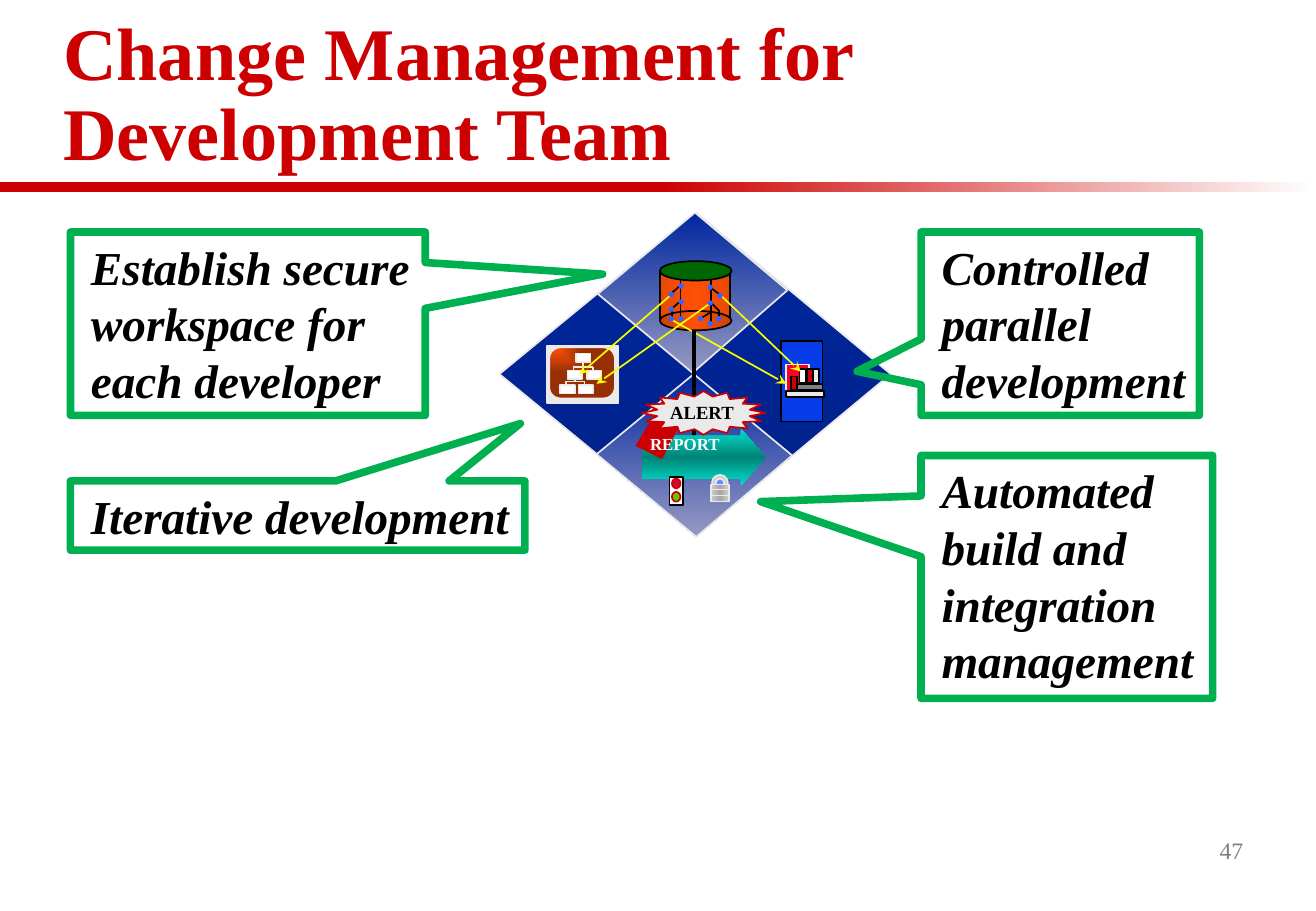
"""Build the slide on change management for a development team."""
from dataclasses import dataclass
from typing import Optional, Union

from lxml import etree
from pptx import Presentation
from pptx.dml.color import RGBColor
from pptx.enum.shapes import MSO_CONNECTOR, MSO_SHAPE
from pptx.enum.text import MSO_ANCHOR, PP_ALIGN
from pptx.oxml.ns import qn
from pptx.shapes.autoshape import Shape
from pptx.slide import Slide
from pptx.util import Cm, Length, Pt

RECT, OVAL, ROUNDED = MSO_SHAPE.RECTANGLE, MSO_SHAPE.OVAL, MSO_SHAPE.ROUNDED_RECTANGLE
ARROW, STAR = MSO_SHAPE.RIGHT_ARROW, MSO_SHAPE.STAR_16_POINT
CALLOUT = MSO_SHAPE.RECTANGULAR_CALLOUT
STRAIGHT = MSO_CONNECTOR.STRAIGHT
TOP, MIDDLE, BOTTOM = MSO_ANCHOR.TOP, MSO_ANCHOR.MIDDLE, MSO_ANCHOR.BOTTOM
LEFT, RIGHT = PP_ALIGN.LEFT, PP_ALIGN.RIGHT
FONT = "Times New Roman"
RED, BLACK, WHITE, PALE = "CC0000", "000000", "FFFFFF", "EAEAEA"
YELLOW, BLUE, GREEN, GREY = "FAFD00", "3365FB", "00B050", "808080"


@dataclass(frozen=True)
class Gradient:
    """Evenly spaced colours; no angle means outwards from the top left corner."""
    colors: tuple[str, ...]
    angle: Optional[int] = 0


Fill = Union[str, Gradient, None]


@dataclass(frozen=True)
class Box:
    """A preset shape, placed in inches."""
    kind: MSO_SHAPE
    at: tuple[float, float, float, float]
    fill: Fill = None
    line: Optional[str] = None
    width: float = 1
    adjust: tuple[float, ...] = ()


@dataclass(frozen=True)
class Polygon:
    """A closed outline through points in inches."""
    points: tuple[tuple[float, float], ...]
    fill: Fill
    line: Optional[str] = None
    width: float = 1


@dataclass(frozen=True)
class Stroke:
    """A straight line between two points in inches."""
    ends: tuple[float, float, float, float]
    color: str
    width: float = 1
    arrow: bool = False


@dataclass(frozen=True)
class Words:
    """Paragraphs with their type style and frame settings."""
    lines: tuple[str, ...]
    size: float
    color: str = BLACK
    bold: bool = True
    italic: bool = False
    align: PP_ALIGN = LEFT
    anchor: MSO_ANCHOR = TOP
    wrap: bool = False
    margins: tuple[float, float] = (0.1, 0.05)
    indent: float = 0
    spacing: Optional[float] = None


def inches(value: float) -> Length:
    """Convert inches to a length."""
    return Cm(value * 2.54)


def rgb(color: str) -> RGBColor:
    """Turn a hex string into a colour."""
    return RGBColor.from_string(color)


def paint(shape: Shape, fill: Fill, line: Optional[str], width: float) -> None:
    """Set fill, outline and absence of shadow."""
    shape.shadow.inherit = False
    if isinstance(fill, Gradient):
        shape.fill.gradient()
        if fill.angle is not None:
            shape.fill.gradient_angle = (360 - fill.angle) % 360
        gradient = shape.element.spPr.find(qn("a:gradFill"))
        stops = gradient.find(qn("a:gsLst"))
        for stop in list(stops):
            stops.remove(stop)
        for index, color in enumerate(fill.colors):
            position = 100000 * index // (len(fill.colors) - 1)
            stop = etree.SubElement(stops, qn("a:gs"), {"pos": str(position)})
            etree.SubElement(stop, qn("a:srgbClr"), {"val": color})
        if fill.angle is None:
            gradient.remove(gradient.find(qn("a:lin")))
            corner = etree.SubElement(gradient, qn("a:path"), {"path": "rect"})
            etree.SubElement(corner, qn("a:fillToRect"), {"r": "100000", "b": "100000"})
    elif fill:
        shape.fill.solid()
        shape.fill.fore_color.rgb = rgb(fill)
    else:
        shape.fill.background()
    if line:
        shape.line.color.rgb = rgb(line)
        shape.line.width = Pt(width)
    else:
        shape.line.fill.background()


def draw(slide: Slide, item: Union[Box, Polygon, Stroke]) -> Shape:
    """Draw one item on the slide."""
    if isinstance(item, Stroke):
        connector = slide.shapes.add_connector(STRAIGHT, *map(inches, item.ends))
        connector.line.color.rgb = rgb(item.color)
        connector.line.width = Pt(item.width)
        if item.arrow:
            outline = connector.element.spPr.find(qn("a:ln"))
            etree.SubElement(outline, qn("a:tailEnd"), {"type": "stealth"})
        etree.SubElement(connector.element.spPr, qn("a:effectLst"))
        return connector
    if isinstance(item, Polygon):
        start, *others = [(inches(x), inches(y)) for x, y in item.points]
        builder = slide.shapes.build_freeform(*start)
        builder.add_line_segments(others, close=True)
        shape = builder.convert_to_shape()
    else:
        shape = slide.shapes.add_shape(item.kind, *map(inches, item.at))
        for index, value in enumerate(item.adjust):
            shape.adjustments[index] = value
    paint(shape, item.fill, item.line, item.width)
    return shape


def write(shape: Shape, words: Words) -> None:
    """Fill the text frame of a shape."""
    frame = shape.text_frame
    frame.word_wrap = words.wrap
    frame.vertical_anchor = words.anchor
    frame.margin_left = frame.margin_right = inches(words.margins[0])
    frame.margin_top = frame.margin_bottom = inches(words.margins[1])
    for index, line in enumerate(words.lines):
        paragraph = frame.add_paragraph() if index else frame.paragraphs[0]
        paragraph.alignment = words.align
        paragraph.line_spacing = words.spacing
        if words.indent:
            paragraph._p.get_or_add_pPr().set("marL", str(inches(words.indent)))
        run = paragraph.add_run()
        run.text = line
        run.font.name, run.font.size = FONT, Pt(words.size)
        run.font.bold, run.font.italic = words.bold, words.italic
        run.font.color.rgb = rgb(words.color)


def label(slide: Slide, at: tuple[float, float, float, float], words: Words) -> None:
    """Add a text box."""
    write(slide.shapes.add_textbox(*map(inches, at)), words)


def strokes(color: str, ends: list[tuple[float, float, float, float]], arrow: bool = False) -> list[Stroke]:
    """Make thin lines of one colour."""
    return [Stroke(end, color, arrow=arrow) for end in ends]


def boxes(kind: MSO_SHAPE, size: tuple[float, float], fill: str, line: str,
          corners: list[tuple[float, float]]) -> list[Box]:
    """Make equal shapes at several corners."""
    return [Box(kind, (*corner, *size), fill, line) for corner in corners]


QUARTER = Gradient(("00279F", "9799C2"), 90)
DRUM = Gradient(("CC4006", "FF5008", "CC4006"))
RULE = [Box(RECT, (0, 1.5, 5.42, 0.08), RED),
        Box(RECT, (5.41, 1.5, 5.42, 0.08), Gradient((RED, WHITE)))]
DIAMOND = [
    Polygon(((4.11, 3.08), (5.73, 1.75), (7.33, 3.08), (5.73, 4.41)), Gradient(("00279F", "002188"), 90), PALE),
    Box(RECT, (6.43, 2.81, 0.34, 0.66), "063DE8", BLACK),
    Polygon(((4.92, 2.42), (5.72, 1.75), (6.48, 2.39), (5.7, 3.07)), QUARTER, PALE),
    Box(RECT, (5.43, 2.24, 0.58, 0.4), Gradient(("E74907", "FF5008", "E74907")), BLACK),
    Box(OVAL, (5.43, 2.56, 0.59, 0.16), DRUM, BLACK),
    Polygon(((4.91, 3.74), (5.71, 3.08), (6.52, 3.75), (5.73, 4.42)), QUARTER, PALE)]
HIERARCHY = [
    Box(RECT, (4.5, 2.85, 0.59, 0.47), PALE, PALE),
    Box(ROUNDED, (4.52, 2.86, 0.54, 0.42), Gradient(("FF5008", "972F05"), None), PALE, adjust=(0.22,)),
    *strokes(PALE, [(4.67, 3.14, 4.81, 3.14), (4.81, 3.14, 4.81, 3.17), (4.66, 3.14, 4.66, 3.17),
                    (4.73, 3.14, 4.73, 3.11), (4.72, 3.02, 4.88, 3.02), (4.88, 3.02, 4.88, 3.05),
                    (4.72, 3.01, 4.72, 3.05), (4.8, 2.98, 4.8, 3.02)]),
    *boxes(RECT, (0.12, 0.07), WHITE, PALE,
           [(4.67, 3.05), (4.83, 3.05), (4.61, 3.17), (4.76, 3.17), (4.74, 2.91)])]
SHELF = [Box(RECT, (6.47, 3, 0.19, 0.27), "FC0128", PALE), Box(RECT, (6.47, 3.22, 0.31, 0.05), PALE, BLACK),
         *[Box(RECT, (x, y, 0.05, 0.11), fill, BLACK) for x, y, fill in
           [(6.51, 3.1, RED), (6.58, 3.04, WHITE), (6.64, 3.04, RED), (6.69, 3.04, PALE)]]]
FLOWS = strokes(YELLOW, [(5.52, 2.43, 4.77, 3.08), (5.84, 2.5, 4.91, 3.16),
                         (5.94, 2.44, 6.59, 3.06), (5.54, 2.64, 6.47, 3.16)], arrow=True)
BRANCHES = [
    *strokes(BLACK, [(5.6, 2.28, 5.6, 2.64), (5.6, 2.35, 5.53, 2.41), (5.6, 2.48, 5.53, 2.54),
                     (5.53, 2.54, 5.53, 2.61), (5.85, 2.29, 5.85, 2.65), (5.85, 2.37, 5.93, 2.43),
                     (5.85, 2.49, 5.92, 2.56), (5.92, 2.56, 5.92, 2.62), (5.85, 2.57, 5.77, 2.62)]),
    *boxes(OVAL, (0.03, 0.03), BLUE, BLUE,
           [(5.59, 2.34), (5.59, 2.47), (5.59, 2.61), (5.51, 2.53), (5.51, 2.61), (5.51, 2.41),
            (5.91, 2.42), (5.75, 2.61), (5.83, 2.65), (5.83, 2.48), (5.83, 2.35), (5.9, 2.61)])]
PIPELINE = [
    Stroke((5.71, 2.72, 5.71, 3.69), BLACK, 2), Box(RECT, (6.56, 3.16, 0.21, 0.05), GREY, BLACK),
    Box(OVAL, (5.43, 2.15, 0.59, 0.16), "006600", BLACK),
    Box(ARROW, (5.28, 3.53, 1.02, 0.47), Gradient(("00DFCA", "008477", "00DFCA"), 90), adjust=(0.75, 0.43))]
PADLOCK = [
    Box(OVAL, (5.86, 3.91, 0.13, 0.13), "CECECE", PALE), Box(OVAL, (5.89, 3.94, 0.07, 0.08), "618FFD", PALE),
    Box(RECT, (5.85, 3.99, 0.15, 0.14), Gradient(("CECECE", "A5A5A5", "CECECE")), PALE),
    *strokes(PALE, [(5.84, y, 6, y) for y in (4.03, 4.08)])]
REPORT_TAG = Polygon(((5.37, 3.44), (5.59, 3.51), (5.45, 3.78), (5.23, 3.67)), RED)
TRAFFIC_LIGHT = [Box(RECT, (5.51, 3.93, 0.11, 0.23), WHITE, BLACK),
                 *[Box(OVAL, (5.53, y, 0.07, 0.08), fill, RED) for y, fill in [(3.94, "CF0E30"), (4.05, "60C900")]]]
ALERT = Box(STAR, (5.28, 3.22, 1.02, 0.36), PALE, RED, adjust=(0.38,))
PRACTICES = [
    ((0.58, 1.91, 2.92, 1.51), (1, -0.27), ("Establish secure", "workspace for", "each developer"), False),
    ((0.58, 3.96, 3.74, 0.57), (0.49, -1.33), ("Iterative development",), False),
    ((7.58, 1.91, 2.29, 1.51), (-0.73, 0.26), ("Controlled", "parallel", "development"), False),
    ((7.58, 3.75, 2.4, 2), (-1.05, -0.31), ("Automated build and integration management",), True)]


def main() -> None:
    """Build and save the slide."""
    deck = Presentation()
    deck.slide_width, deck.slide_height = inches(10.83), inches(7.5)
    slide = deck.slides.add_slide(deck.slide_layouts[6])
    for item in [*RULE, *DIAMOND, *HIERARCHY, *SHELF, *FLOWS, *BRANCHES, *PIPELINE, *PADLOCK, REPORT_TAG]:
        draw(slide, item)
    label(slide, (5.26, 3.52, 0.76, 0.26), Words(("REPORT",), 10, WHITE, margins=(0.09, 0.05)))
    for item in TRAFFIC_LIGHT:
        draw(slide, item)
    write(draw(slide, ALERT), Words(("ALERT",), 11, margins=(0, 0)))
    label(slide, (8.12, 6.75, 2.21, 0.5), Words(("47",), 14, GREY, bold=False, align=RIGHT, anchor=MIDDLE))
    label(slide, (0.42, 0.29, 9.92, 1.21),
          Words(("Change Management for Development Team",), 44, RED, anchor=BOTTOM, wrap=True, spacing=0.9))
    for at, tip, lines, wrap in PRACTICES:
        callout = draw(slide, Box(CALLOUT, at, line=GREEN, width=4.5, adjust=tip))
        write(callout, Words(lines, 28, italic=True, wrap=wrap, indent=0.07))
    deck.save("out.pptx")


if __name__ == "__main__":
    main()
